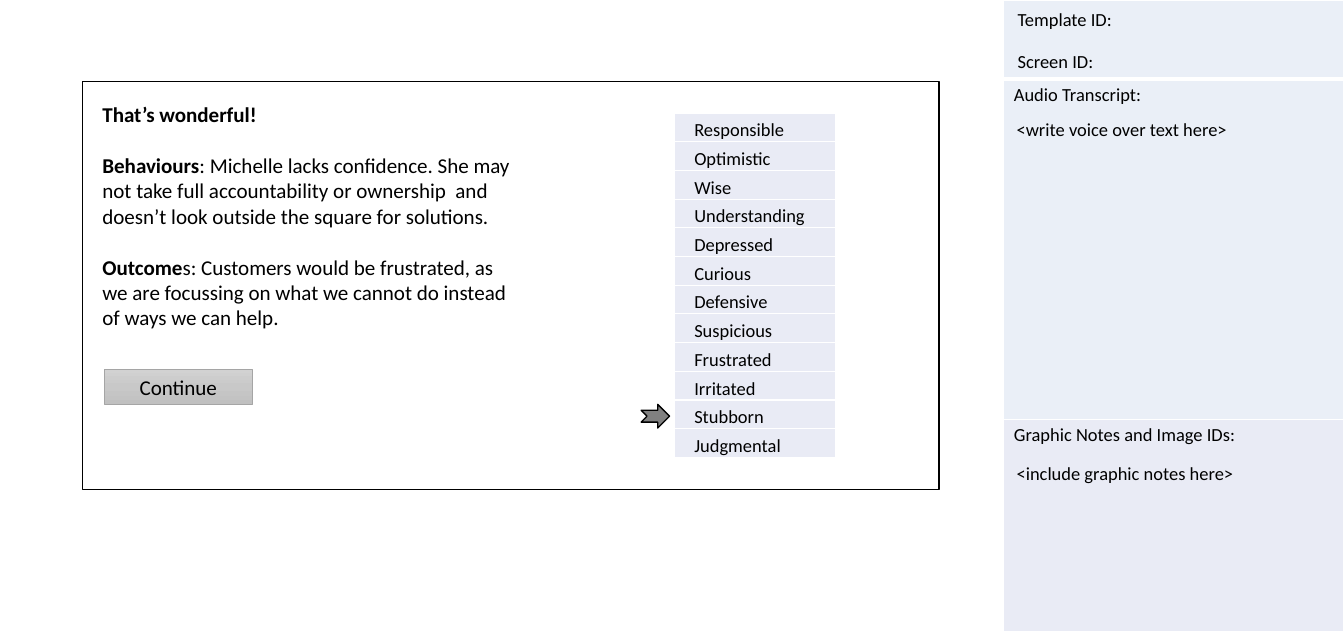
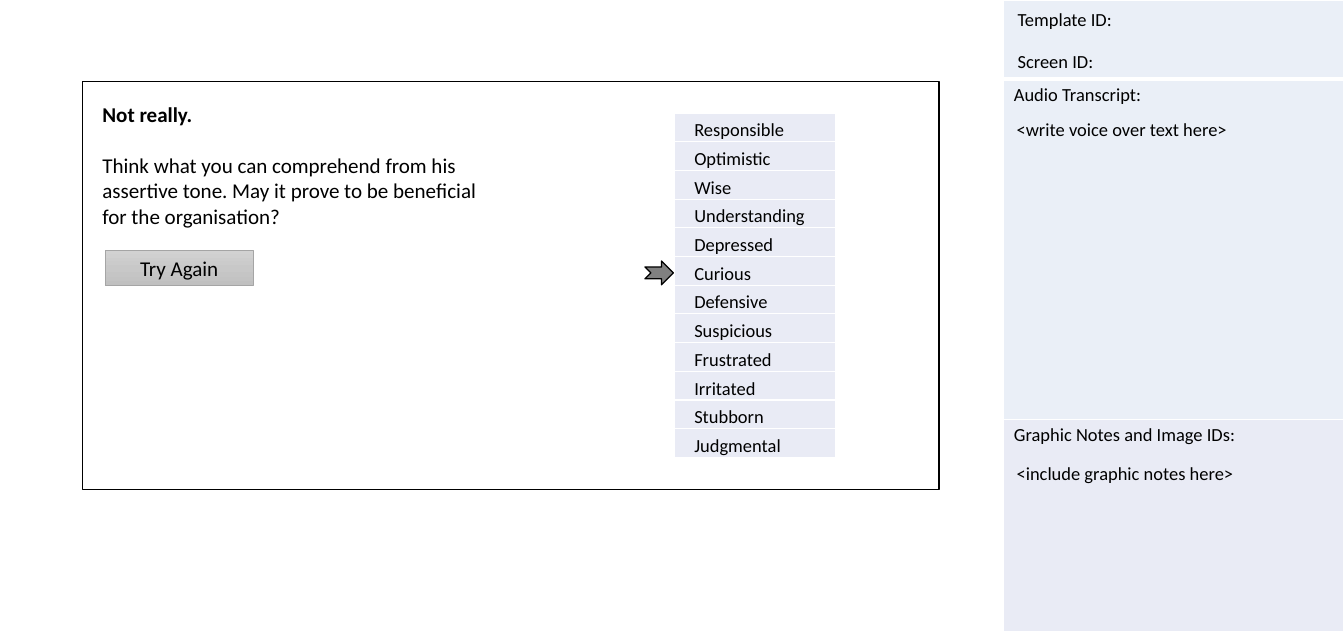
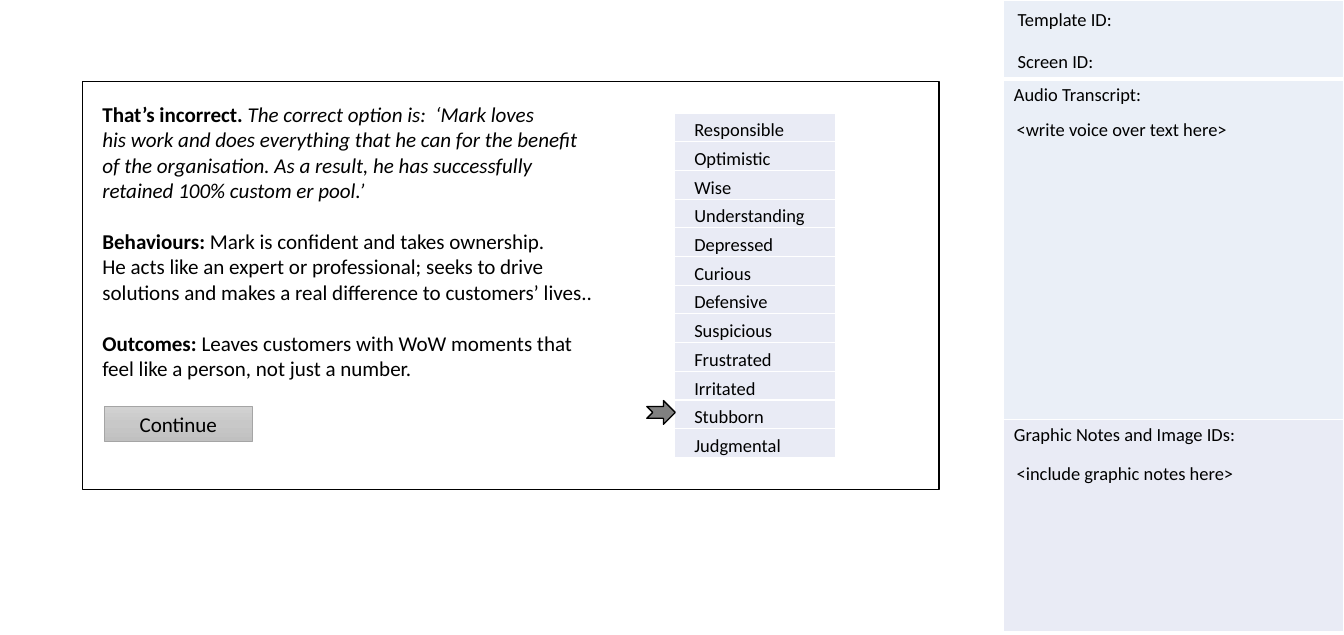
"""Build three storyboard feedback screens with a shared notes sidebar."""
from copy import deepcopy
from dataclasses import dataclass

from lxml.etree import SubElement
from pptx import Presentation
from pptx.dml.color import RGBColor
from pptx.enum.shapes import MSO_SHAPE
from pptx.enum.text import MSO_ANCHOR, MSO_AUTO_SIZE, PP_ALIGN
from pptx.oxml.ns import qn
from pptx.shapes.autoshape import Shape
from pptx.slide import Slide
from pptx.table import _Cell
from pptx.text.text import _Paragraph
from pptx.util import Inches, Pt

COLORS = {
    "ink": "000000",
    "paper": "FFFFFF",
    "sidebar": "EAEFF7",
    "row": "E9EBF5",
    "arrow": "808080",
    "button_top": "D2D2D2",
    "button_middle": "C8C8C8",
    "button_bottom": "C0C0C0",
    "button_line": "A5A5A5",
}
FONT = "Calibri"
NOTE_SIZE = 14
BODY_SIZE = 16
BLANK_LINE = Pt(19.5)
TRAITS = (
    "Responsible", "Optimistic", "Wise", "Understanding", "Depressed", "Curious",
    "Defensive", "Suspicious", "Frustrated", "Irritated", "Stubborn", "Judgmental",
)


@dataclass(frozen=True)
class Box:
    left: float
    top: float
    width: float
    height: float

    def lengths(self) -> tuple[Inches, Inches, Inches, Inches]:
        return Inches(self.left), Inches(self.top), Inches(self.width), Inches(self.height)


@dataclass(frozen=True)
class Row:
    text: str
    height: float
    fill: str
    bottom_line: float = 1


@dataclass(frozen=True)
class CellStyle:
    margins: tuple[float, float, float, float]
    anchor: MSO_ANCHOR
    indent: float = 0


@dataclass(frozen=True)
class Note:
    text: str
    box: Box


@dataclass(frozen=True)
class Span:
    text: str
    bold: bool = False
    italic: bool = False


@dataclass(frozen=True)
class Screen:
    feedback: tuple[tuple[Span, ...], ...]
    button: str
    button_at: tuple[float, float]
    arrow_at: tuple[float, float]


CARD = Box(0.87, 0.86, 9.03, 4.3)
SIDEBAR_STYLE = CellStyle((0.11, 0.05, 0.11, 0.05), MSO_ANCHOR.TOP)
TRAIT_STYLE = CellStyle((0.01, 0.01, 0.01, 0), MSO_ANCHOR.BOTTOM, 0.2)
SIDEBAR_ROWS = [
    Row("", 0.83, "sidebar", 3),
    Row("Audio Transcript:", 3.59, "sidebar"),
    Row("Graphic Notes and Image IDs:", 2.23, "row"),
]
TRAIT_ROWS = [Row(trait, 3.63 / len(TRAITS), "row") for trait in TRAITS]
NOTES = [
    Note("Screen ID:", Box(10.63, 0.48, 3.82, 0.34)),
    Note("Template ID:", Box(10.63, 0.04, 3.82, 0.34)),
    Note("<write voice over text here>", Box(10.62, 1.19, 3.56, 0.34)),
    Note("<include graphic notes here>", Box(10.62, 4.82, 3.56, 0.34)),
]
SCREENS = [
    Screen(
        (
            (Span("That’s wonderful!", bold=True),),
            (
                Span("Behaviours", bold=True),
                Span(": Michelle lacks confidence. She may\n"
                     "not take full accountability or ownership  and\n"
                     "doesn’t look outside the square for solutions."),
            ),
            (
                Span("Outcome", bold=True),
                Span("s: Customers would be frustrated, as\n"
                     "we are focussing on what we cannot do instead\n"
                     "of ways we can help."),
            ),
        ),
        "Continue", (1.1, 3.89), (6.76, 4.26),
    ),
    Screen(
        (
            (Span("Not really.", bold=True),),
            (
                Span("Think what you can comprehend from his\n"
                     "assertive tone. May it prove to be beneﬁcial\n"
                     "for the organisation?"),
            ),
        ),
        "Try Again", (1.11, 2.64), (6.8, 2.75),
    ),
    Screen(
        (
            (
                Span("That’s incorrect. ", bold=True),
                Span("The correct option is:  ‘Mark loves\n"
                     "his work and does everything that he can for the beneﬁt\n"
                     "of the organisation. As a result, he has successfully\n"
                     "retained 100% custom er pool.’", italic=True),
            ),
            (
                Span("Behaviours: ", bold=True),
                Span("Mark is conﬁdent and takes ownership.\n"
                     "He acts like an expert or professional; seeks to drive\n"
                     "solutions and makes a real difference to customers’ lives.."),
            ),
            (
                Span("Outcomes: ", bold=True),
                Span("Leaves customers with WoW moments that\n"
                     "feel like a person, not just a number."),
            ),
        ),
        "Continue", (1.1, 4.28), (6.82, 4.22),
    ),
]


def color(name: str) -> RGBColor:
    return RGBColor.from_string(COLORS[name])


def format_paragraph(paragraph: _Paragraph, size: float) -> None:
    paragraph.font.name = FONT
    paragraph.font.size = Pt(size)
    paragraph.font.color.rgb = color("ink")


def draw_borders(cell: _Cell, bottom_line: float) -> None:
    properties = cell._tc.get_or_add_tcPr()
    for index, side in enumerate(("lnL", "lnR", "lnT", "lnB")):
        points = bottom_line if side == "lnB" else 1
        border = SubElement(properties, qn(f"a:{side}"), w=str(Pt(points)))
        SubElement(SubElement(border, qn("a:solidFill")), qn("a:srgbClr"), val=COLORS["paper"])
        properties.insert(index, border)


def draw_column(slide: Slide, left: float, top: float, width: float,
                rows: list[Row], style: CellStyle) -> None:
    box = Box(left, top, width, sum(row.height for row in rows))
    table = slide.shapes.add_table(len(rows), 1, *box.lengths()).table
    table.first_row = False
    table.horz_banding = False
    for index, row in enumerate(rows):
        table.rows[index].height = Inches(row.height)
        cell = table.cell(index, 0)
        cell.fill.solid()
        cell.fill.fore_color.rgb = color(row.fill)
        draw_borders(cell, row.bottom_line)
        cell.margin_left, cell.margin_top, cell.margin_right, cell.margin_bottom = map(
            Inches, style.margins)
        cell.vertical_anchor = style.anchor
        cell.text = row.text
        paragraph = cell.text_frame.paragraphs[0]
        format_paragraph(paragraph, NOTE_SIZE)
        if style.indent:
            paragraph._p.get_or_add_pPr().set("marL", str(Inches(style.indent)))


def draw_note(slide: Slide, note: Note) -> None:
    frame = slide.shapes.add_textbox(*note.box.lengths()).text_frame
    frame.word_wrap = True
    frame.auto_size = MSO_AUTO_SIZE.SHAPE_TO_FIT_TEXT
    frame.text = note.text
    format_paragraph(frame.paragraphs[0], NOTE_SIZE)


def draw_shape(slide: Slide, preset: MSO_SHAPE, box: Box, fill: str,
               line: str = "ink", line_width: float = 1) -> Shape:
    shape = slide.shapes.add_shape(preset, *box.lengths())
    shape.shadow.inherit = False
    shape.fill.solid()
    shape.fill.fore_color.rgb = color(fill)
    shape.line.color.rgb = color(line)
    shape.line.width = Pt(line_width)
    return shape


def draw_feedback(slide: Slide, feedback: tuple[tuple[Span, ...], ...]) -> None:
    frame = draw_shape(slide, MSO_SHAPE.RECTANGLE, CARD, "paper").text_frame
    frame.word_wrap = True
    frame.vertical_anchor = MSO_ANCHOR.TOP
    frame.margin_left = frame.margin_top = Inches(0.21)
    frame.margin_right = frame.margin_bottom = Inches(0.21)
    for index, spans in enumerate(feedback):
        paragraph = frame.add_paragraph() if index else frame.paragraphs[0]
        paragraph.alignment = PP_ALIGN.LEFT
        paragraph.space_before = BLANK_LINE if index else Pt(0)
        format_paragraph(paragraph, BODY_SIZE)
        for span in spans:
            for line_number, line in enumerate(span.text.split("\n")):
                if line_number:
                    paragraph.add_line_break()
                run = paragraph.add_run()
                run.text = line
                run.font.bold = span.bold
                run.font.italic = span.italic


def draw_button(slide: Slide, label: str, left: float, top: float) -> None:
    button = draw_shape(slide, MSO_SHAPE.RECTANGLE, Box(left, top, 1.56, 0.37),
                        "button_middle", "button_line", 0.5)
    button.fill.gradient()
    button.fill.gradient_angle = 270
    stops = button._element.spPr.find(".//" + qn("a:gsLst"))
    stops.insert(1, deepcopy(stops[0]))
    shades = ("button_top", "button_middle", "button_bottom")
    for index, (stop, shade) in enumerate(zip(button.fill.gradient_stops, shades)):
        stop.position = index / 2
        stop.color.rgb = color(shade)
    frame = button.text_frame
    frame.margin_left = frame.margin_right = Inches(0)
    frame.vertical_anchor = MSO_ANCHOR.MIDDLE
    frame.text = label
    frame.paragraphs[0].alignment = PP_ALIGN.CENTER
    format_paragraph(frame.paragraphs[0], BODY_SIZE)


def draw_screen(slide: Slide, screen: Screen) -> None:
    draw_column(slide, 10.58, 0, 3.59, SIDEBAR_ROWS, SIDEBAR_STYLE)
    for note in NOTES:
        draw_note(slide, note)
    draw_feedback(slide, screen.feedback)
    draw_column(slide, 7.11, 1.19, 1.7, TRAIT_ROWS, TRAIT_STYLE)
    draw_shape(slide, MSO_SHAPE.NOTCHED_RIGHT_ARROW, Box(*screen.arrow_at, 0.3, 0.25), "arrow")
    draw_button(slide, screen.button, *screen.button_at)


def main() -> None:
    presentation = Presentation()
    presentation.slide_width = Inches(14.17)
    presentation.slide_height = Inches(6.69)
    blank_layout = presentation.slide_layouts[6]
    for screen in SCREENS:
        draw_screen(presentation.slides.add_slide(blank_layout), screen)
    presentation.save("out.pptx")


if __name__ == "__main__":
    main()
